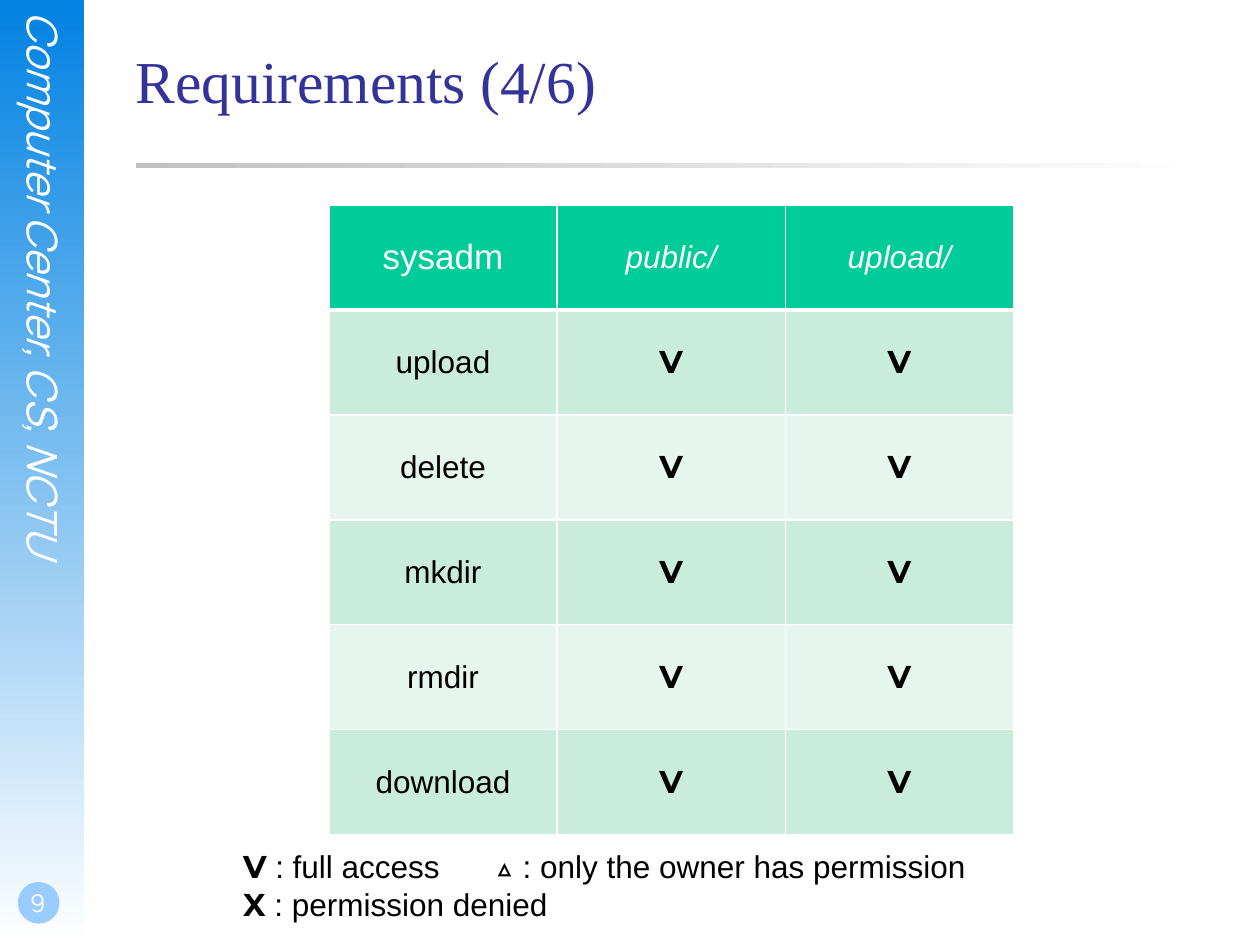
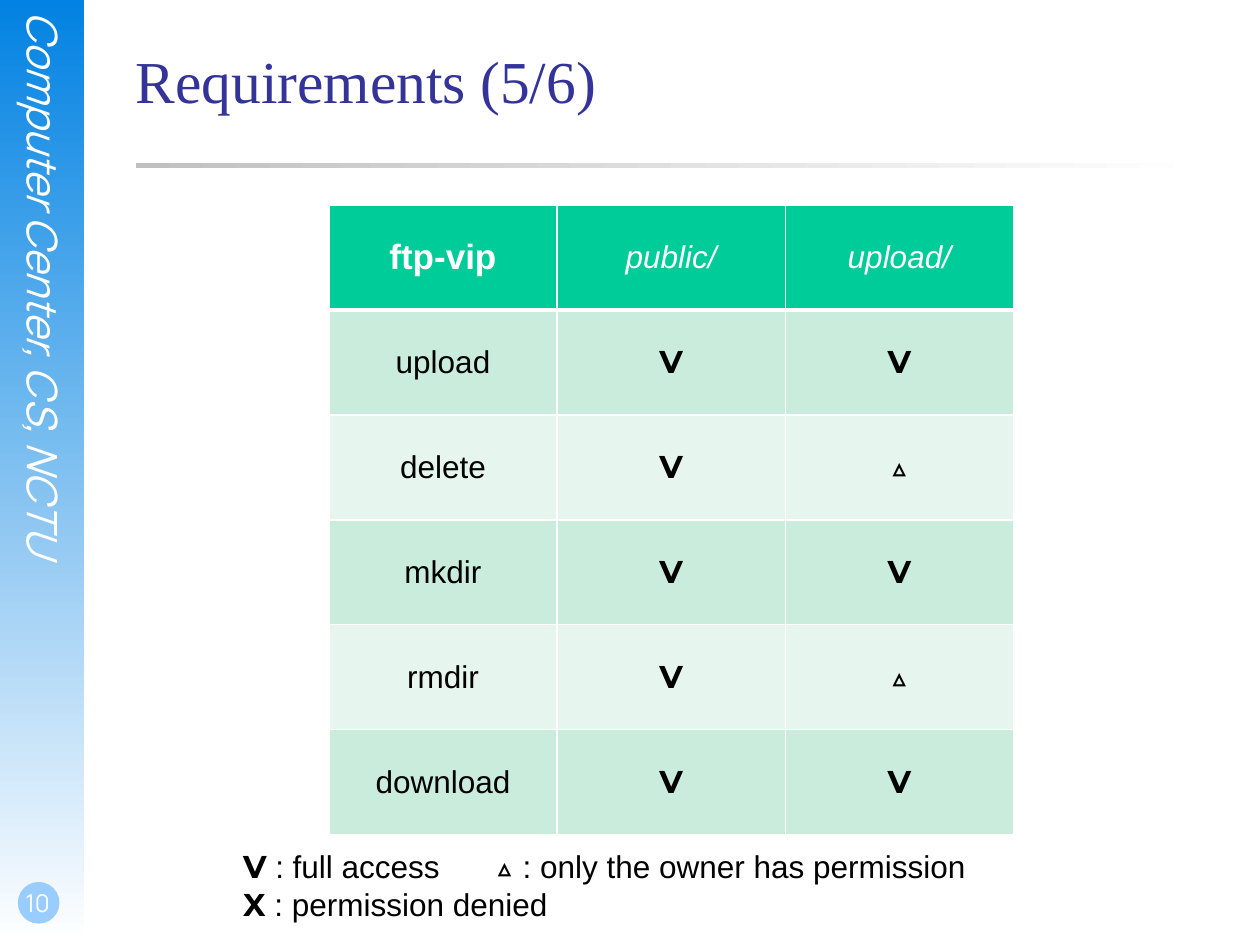
from dataclasses import dataclass

from lxml.etree import SubElement, Element
from pptx import Presentation
from pptx.dml.color import RGBColor as Rgb
from pptx.enum.shapes import MSO_SHAPE as Preset
from pptx.enum.text import MSO_ANCHOR as Anchor, PP_ALIGN as Align
from pptx.oxml.ns import qn
from pptx.util import Cm, Pt


@dataclass(frozen=True)
class Theme:
    """Colours, fonts and type sizes shared by every slide."""
    white: str = "FFFFFF"
    ink: str = "000000"
    title: str = "333399"
    band: str = "0282E2"
    badge: str = "99CCFF"
    rule: str = "C0C0C0"
    header: str = "00CC99"
    stripes: tuple = ("CAECDD", "E6F6EF")
    title_font: str = "Times New Roman"
    side_font: str = "Manrope"
    body_font: str = "Arial"
    mark_font: str = "Montserrat"
    title_size: int = 34
    side_size: int = 24
    group_size: int = 20
    body_size: int = 18
    number_size: int = 14


@dataclass(frozen=True)
class Box:
    """A rectangle measured in centimetres."""
    left: float
    top: float
    width: float
    height: float

    def inside(self, left, top, width, height):
        """Return a box offset from this one's corner."""
        return Box(self.left + left, self.top + top, width, height)

    def lengths(self):
        """Return the four lengths for python-pptx."""
        return [Cm(v) for v in (self.left, self.top, self.width, self.height)]


THEME = Theme()
FULL, OWNER, DENIED = "V", "△", "X"
ACTIONS = ("upload", "delete", "mkdir", "rmdir", "download")
FOLDERS = ("public/", "upload/")
OWNER_ONLY = {("delete", "upload/"), ("rmdir", "upload/")}

BODY = dict(name=THEME.body_font, size=THEME.body_size, color=THEME.ink)
MARK = dict(BODY, name=THEME.mark_font, bold=True)
FOLDER = dict(BODY, color=THEME.white, bold=False, italic=True)
GROUP = dict(BODY, color=THEME.white, size=THEME.group_size)
TITLE = dict(name=THEME.title_font, size=THEME.title_size, color=THEME.title)
SIDE = dict(name=THEME.side_font, size=THEME.side_size, color=THEME.white, italic=True)
NUMBER = dict(name=THEME.side_font, size=THEME.number_size, color=THEME.white)


def add_span(para, text, style):
    """Append one formatted run to a paragraph."""
    span = para.add_run()
    span.text = text
    values = dict(style, size=Pt(style["size"]))
    span.font.color.rgb = Rgb.from_string(values.pop("color"))
    for name, value in values.items():
        setattr(span.font, name, value)


def add_text(page, box, lines, insets=(0, 0, 0, 0), align=Align.LEFT, **frame_values):
    """Add a text box whose lines are lists of (text, style) pairs."""
    shape = page.shapes.add_textbox(*box.lengths())
    frame = shape.text_frame
    sides = ("margin_left", "margin_top", "margin_right", "margin_bottom")
    values = dict(zip(sides, map(Cm, insets)), word_wrap=True, **frame_values)
    for name, value in values.items():
        setattr(frame, name, value)
    for index, spans in enumerate(lines):
        para = frame.add_paragraph() if index else frame.paragraphs[0]
        para.alignment = align
        for text, style in spans:
            add_span(para, text, style)
    return shape


def add_block(page, box, colors, preset=Preset.RECTANGLE, angle=0):
    """Add a borderless shape with a solid or two-colour gradient fill."""
    shape = page.shapes.add_shape(preset, *box.lengths())
    shape.shadow.inherit = False
    shape.line.fill.background()
    if len(colors) == 1:
        shape.fill.solid()
        shape.fill.fore_color.rgb = Rgb.from_string(colors[0])
        return
    shape.fill.gradient()
    shape.fill.gradient_angle = angle
    for stop, color in zip(shape.fill.gradient_stops, colors):
        stop.color.rgb = Rgb.from_string(color)


def add_side_band(page, box, number):
    """Draw the side band with its vertical caption and page number."""
    add_block(page, box, (THEME.band, THEME.white), angle=270)
    caption = add_text(page, box.inside(-5.61, 6.22, 12.98, 1.02),
                       [[("Computer Center, CS, NCTU", SIDE)]])
    caption.rotation = 90
    add_block(page, box.inside(0.36, 17.78, 0.84, 0.84), (THEME.badge,), Preset.OVAL)
    add_text(page, box.inside(0, 17.35, 1.47, 1.27), [[(str(number), NUMBER)]],
             (0.05, 0, 0, 0.13), Align.CENTER, vertical_anchor=Anchor.BOTTOM)


def add_heading(page, box, text):
    """Draw the title and the fading rule below it."""
    add_block(page, box.inside(0, 2.57, box.width, 0.1), (THEME.rule, THEME.white))
    add_text(page, box, [[(text, TITLE)]], (0, 0.18, 0, 0))


def set_borders(cell, widths):
    """Give a cell white borders, with widths in points by side."""
    properties = cell._tc.get_or_add_tcPr()
    for index, (side, width) in enumerate(widths.items()):
        line = Element(qn(f"a:ln{side}"), w=str(Pt(width)))
        fill = SubElement(line, qn("a:solidFill"))
        SubElement(fill, qn("a:srgbClr"), val=THEME.white)
        properties.insert(index, line)


def permission_rows(group, group_style, owner_only):
    """Return the table's rows as (text, style) pairs."""
    yield [(group, group_style)] + [(folder, FOLDER) for folder in FOLDERS]
    for action in ACTIONS:
        marks = [OWNER if (action, folder) in owner_only else FULL for folder in FOLDERS]
        yield [(action, BODY)] + [(mark, MARK) for mark in marks]


def add_permissions(page, box, rows):
    """Draw the permission table with equal rows and columns."""
    rows = list(rows)
    table = page.shapes.add_table(len(rows), len(rows[0]), *box.lengths()).table
    table.horz_banding = False
    for row_index, row in enumerate(rows):
        color = THEME.stripes[(row_index - 1) % 2] if row_index else THEME.header
        widths = dict(L=1, R=1, T=3 if row_index == 1 else 1, B=1 if row_index else 3)
        for column, (text, style) in enumerate(row):
            cell = table.cell(row_index, column)
            cell.vertical_anchor = Anchor.MIDDLE
            cell.fill.solid()
            cell.fill.fore_color.rgb = Rgb.from_string(color)
            set_borders(cell, widths)
            para = cell.text_frame.paragraphs[0]
            para.alignment = Align.CENTER
            add_span(para, text, style)


def add_legend(page, box):
    """Explain the permission marks."""
    lines = [
        [(FULL, MARK), (" : full access\t", BODY),
         (OWNER, MARK), (" : only the owner has permission", BODY)],
        [(DENIED + " ", MARK), (": permission denied", BODY)],
    ]
    add_text(page, box, lines, (0.25, 0.13, 0.25, 0.13))


def add_requirements_page(deck, box, number, part, rows):
    """Build one requirements slide inside the given box."""
    page = deck.slides.add_slide(deck.slide_layouts[6])
    add_side_band(page, box.inside(0, 0, 1.7, box.height), number)
    add_heading(page, box.inside(2.74, 0.71, 21.59, 3.18), f"Requirements ({part}/6)")
    add_permissions(page, box.inside(6.63, 4.13, 13.8, 12.7), rows)
    add_legend(page, box.inside(4.65, 16.94, 15.8, 1.9))


def main():
    """Build and save the deck."""
    deck = Presentation()
    sheet = Box(0, 0, 25.4, 19.05)
    deck.slide_width, deck.slide_height = Cm(sheet.width), Cm(sheet.height)
    groups = (("sysadm", dict(GROUP, bold=False), set()),
              ("ftp-vip", dict(GROUP, bold=True), OWNER_ONLY))
    for index, group in enumerate(groups):
        add_requirements_page(deck, sheet, 9 + index, 4 + index, permission_rows(*group))
    deck.save("out.pptx")


if __name__ == "__main__":
    main()
